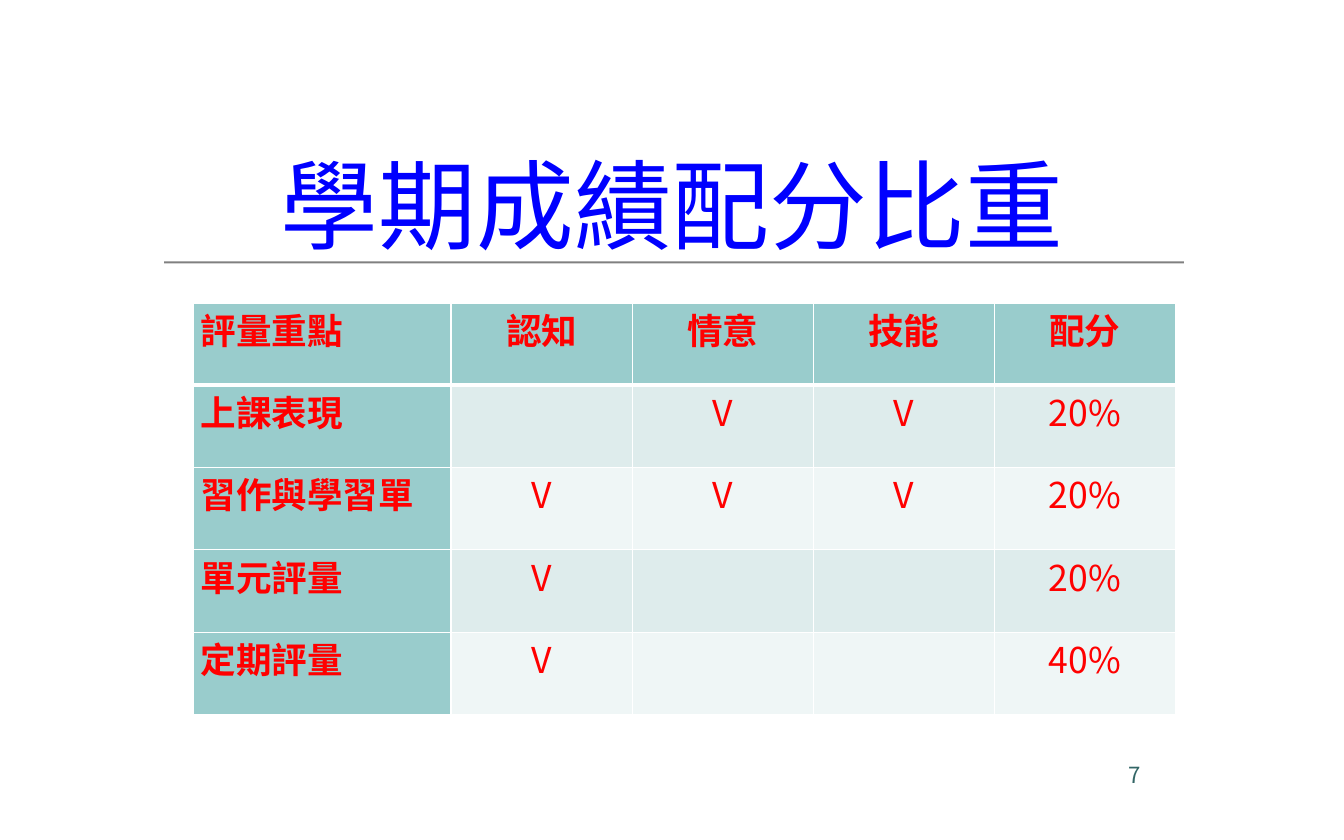
from lxml.etree import SubElement
from pptx import Presentation
from pptx.dml.color import RGBColor
from pptx.enum.shapes import MSO_SHAPE
from pptx.enum.text import MSO_ANCHOR, PP_ALIGN
from pptx.oxml.ns import qn
from pptx.util import Inches, Pt

SLIDE_WIDTH, SLIDE_HEIGHT = Pt(907.25), Pt(567)
FONT = "Noto Sans CJK SC"
WHITE, RED, BLUE, GRAY = "FFFFFF", "FF0000", "0000FF", "808080"
TEAL, DARK_TEAL = "99CCCC", "336666"
BANDS = ["DEECEC", "EFF6F6"]

TABLE_WIDTH, TABLE_HEIGHT, FOCUS_WIDTH = 9.21, 3.86, 2.42
GRADING = [
    ["評量重點", "認知", "情意", "技能", "配分"],
    ["上課表現", "", "V", "V", "20%"],
    ["習作與學習單", "V", "V", "V", "20%"],
    ["單元評量", "V", "", "", "20%"],
    ["定期評量", "V", "", "", "40%"],
]


def color(hex_code):
    return RGBColor.from_string(hex_code)


def write(frame, text, size=24, ink=RED, bold=False, align=PP_ALIGN.LEFT):
    paragraph = frame.paragraphs[0]
    paragraph.alignment = align
    run = paragraph.add_run()
    run.text = text
    run.font.name = FONT
    run.font.size = Pt(size)
    run.font.bold = bold
    run.font.color.rgb = color(ink)
    # East Asian glyphs need their own typeface entry
    SubElement(run.font._element, qn("a:ea"), typeface=FONT)


def add_label(slide, text, left, top, width, height,
              anchor=MSO_ANCHOR.TOP, **text_format):
    label = slide.shapes.add_textbox(*map(Inches, (left, top, width, height)))
    frame = label.text_frame
    frame.word_wrap = True
    frame.vertical_anchor = anchor
    frame.margin_left = frame.margin_right = Inches(0.11)
    write(frame, text, **text_format)


def add_rule(slide, left, top, width, height):
    rule = slide.shapes.add_shape(
        MSO_SHAPE.RECTANGLE, *map(Inches, (left, top, width, height)))
    rule.shadow.inherit = False
    rule.fill.solid()
    rule.fill.fore_color.rgb = color(GRAY)
    rule.line.fill.background()


def set_borders(cell, **widths):
    properties = cell._tc.get_or_add_tcPr()
    for side in "LRTB":
        border = SubElement(properties, qn(f"a:ln{side}"),
                            w=str(Pt(widths.get(side, 1))))
        ink = SubElement(border, qn("a:solidFill"))
        SubElement(ink, qn("a:srgbClr"), val=WHITE)


def fill_cell(cell, text, row, column):
    heading = row == 0 or column == 0
    # Borders come before the fill; a thick line parts header and body
    set_borders(cell, **({"B": 3} if row == 0 else {"T": 3} if row == 1 else {}))
    cell.fill.solid()
    cell.fill.fore_color.rgb = color(TEAL if heading else BANDS[(row - 1) % 2])
    cell.margin_left = cell.margin_right = Inches(0.07)
    cell.margin_top = cell.margin_bottom = 0
    if text:
        write(cell.text_frame, text, bold=heading,
              align=PP_ALIGN.CENTER if column else PP_ALIGN.LEFT)


def add_grading_table(slide, left, top):
    rows, columns = len(GRADING), len(GRADING[0])
    score_width = (TABLE_WIDTH - FOCUS_WIDTH) / (columns - 1)
    widths = [FOCUS_WIDTH] + [score_width] * (columns - 1)
    table = slide.shapes.add_table(
        rows, columns,
        *map(Inches, (left, top, TABLE_WIDTH, TABLE_HEIGHT))).table
    for column, width in zip(table.columns, widths):
        column.width = Inches(width)
    for r, entries in enumerate(GRADING):
        table.rows[r].height = Inches(TABLE_HEIGHT / rows)
        for c, text in enumerate(entries):
            fill_cell(table.cell(r, c), text, r, c)


def main():
    deck = Presentation()
    deck.slide_width = SLIDE_WIDTH
    deck.slide_height = SLIDE_HEIGHT
    slide = deck.slides.add_slide(deck.slide_layouts[6])

    # Title with the rule beneath it
    add_rule(slide, 1.54, 2.45, 9.56, 0.02)
    add_label(slide, "學期成績配分比重", 0, 1.38, SLIDE_WIDTH.inches, 1.05,
              anchor=MSO_ANCHOR.MIDDLE, size=66, ink=BLUE,
              align=PP_ALIGN.CENTER)

    # Page number
    add_label(slide, "7", 10.47, 7.09, 1.78, 0.52, size=15, ink=DARK_TEAL)

    # Weight of each kind of assessment
    add_grading_table(slide, 1.81, 2.84)

    deck.save("out.pptx")


if __name__ == "__main__":
    main()
